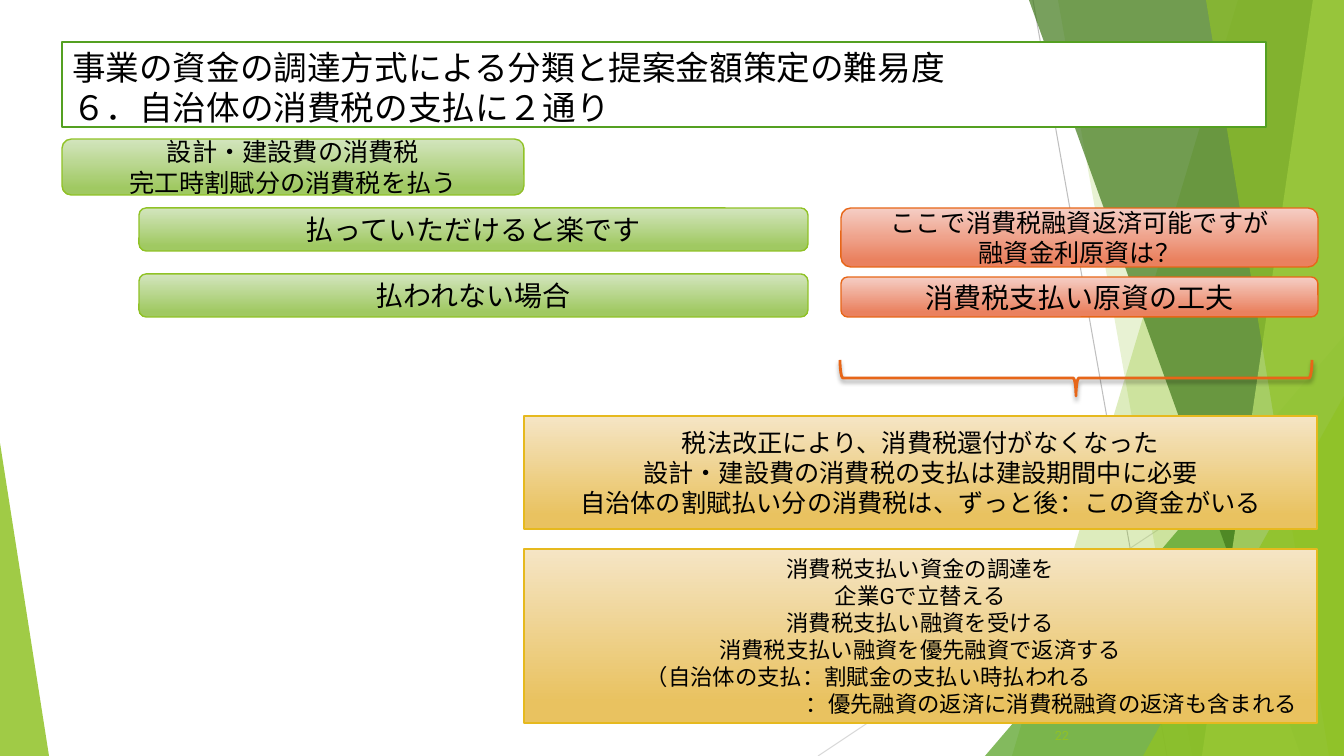
from dataclasses import dataclass

from lxml.etree import SubElement
from pptx import Presentation
from pptx.dml.color import RGBColor
from pptx.enum.shapes import MSO_CONNECTOR as Connector, MSO_SHAPE as Shape
from pptx.enum.text import MSO_ANCHOR as Anchor, MSO_AUTO_SIZE as AutoSize, PP_ALIGN as Align
from pptx.oxml.ns import qn
from pptx.util import Pt

PX = 914400 / 100.8
WIDTH, HEIGHT = 1344, 756


@dataclass(frozen=True)
class Theme:
    font: str = "Roboto"
    ink: str = "000000"
    paper: str = "FFFFFF"
    lime: str = "90C226"
    leaf: str = "54A021"
    forest: str = "3F7819"
    pale: str = "C0E474"
    orange: str = "E76618"
    green_box: tuple = ("D3E5BE", "A0C962", "90C226")
    red_box: tuple = ("F5CEC5", "EA815F", "E76618")
    gold_box: tuple = ("F5E5C5", "E9C260", "E6B91E")
    title: int = 24
    large: int = 20
    medium: int = 18
    small: int = 16
    number: int = 9


THEME = Theme()

TITLE = ["事業の資金の調達方式による分類と提案金額策定の難易度", "６．自治体の消費税の支払に２通り"]
TITLE_AREA = (62, 42, 1204, 85)
PAGE_NUMBER = "22"

# Start x, start y, end x, end y, colour
RAYS = [(1033, 0, 1167, HEIGHT, "BFBFBF"), (WIDTH, 406, 818, HEIGHT, "D9D9D9")]

# Bands: top x, bottom x, colour, opacity; each reaches the right edge
BANDS_BACK = [(1238, 1012, THEME.lime, 30), (1058, 1192, THEME.lime, 20)]
BANDS_FRONT = [
    (1029, 1301, THEME.forest, 70),
    (1313, 1202, THEME.pale, 70),
    (1206, 1329, THEME.lime, 65),
]
# Triangles: left, top, width, apex position, colour, opacity; each reaches the bottom
TRIANGLE_BACK = (985, 336, 359, 1, THEME.leaf, 72)
TRIANGLES_FRONT = [(1143, 396, 201, 1, THEME.lime, 80), (0, 443, 49, 0, THEME.lime, 85)]

LEFT_COLUMN, RIGHT_COLUMN, NOTE_COLUMN = (139, 669), (841, 477), (524, 793)

# Outline, column (left, width), top, height, colours, text size, lines
# A line is a text, or a text with its left indent
BOXES = [
    (Shape.ROUNDED_RECTANGLE, (62, 462), 139, 56, THEME.green_box, THEME.medium,
     ["設計・建設費の消費税", "完工時割賦分の消費税を払う"]),
    (Shape.ROUNDED_RECTANGLE, LEFT_COLUMN, 208, 43, THEME.green_box, THEME.large,
     ["払っていただけると楽です"]),
    (Shape.ROUNDED_RECTANGLE, RIGHT_COLUMN, 208, 59, THEME.red_box, THEME.medium,
     ["ここで消費税融資返済可能ですが", "融資金利原資は？"]),
    (Shape.ROUNDED_RECTANGLE, LEFT_COLUMN, 274, 43, THEME.green_box, THEME.large,
     ["払われない場合"]),
    (Shape.ROUNDED_RECTANGLE, RIGHT_COLUMN, 277, 40, THEME.red_box, THEME.large,
     ["消費税支払い原資の工夫"]),
    (Shape.RECTANGLE, NOTE_COLUMN, 416, 113, THEME.gold_box, THEME.medium,
     ["税法改正により、消費税還付がなくなった",
      "設計・建設費の消費税の支払は建設期間中に必要",
      "自治体の割賦払い分の消費税は、ずっと後：この資金がいる"]),
    (Shape.RECTANGLE, NOTE_COLUMN, 549, 174, THEME.gold_box, THEME.small,
     ["消費税支払い資金の調達を",
      "企業Gで立替える",
      "消費税支払い融資を受ける",
      "消費税支払い融資を優先融資で返済する",
      ("（自治体の支払：割賦金の支払い時払われる", 112),
      ("：優先融資の返済に消費税融資の返済も含まれる", 272)]),
]
BRACE_AREA = (1058, 142, 36, 472)


def px(*lengths):
    return [round(length * PX) for length in lengths]


def rgb(colour):
    return RGBColor.from_string(colour)


def add_span(para, text, size, colour=THEME.ink):
    span = para.add_run()
    span.text = text
    span.font.name = THEME.font
    span.font.size = Pt(size)
    span.font.color.rgb = rgb(colour)


def set_line(shape, colour, width):
    shape.line.color.rgb = rgb(colour)
    shape.line.width = Pt(width)


def tint(shape, colour, opacity):
    """Give a borderless decoration a see-through fill."""
    shape.shadow.inherit = False
    shape.line.fill.background()
    shape.fill.solid()
    shape.fill.fore_color.rgb = rgb(colour)
    value = shape._element.spPr.find(qn("a:solidFill"))[0]
    SubElement(value, qn("a:alpha"), val=str(opacity * 1000))


def add_ray(page, x1, y1, x2, y2, colour):
    ray = page.shapes.add_connector(Connector.STRAIGHT, *px(x1, y1, x2, y2))
    set_line(ray, colour, 0.75)
    SubElement(ray._element.spPr, qn("a:effectLst"))


def add_band(page, top_x, bottom_x, colour, opacity):
    outline = page.shapes.build_freeform(top_x, 0, scale=PX)
    outline.add_line_segments([(WIDTH, 0), (WIDTH, HEIGHT), (bottom_x, HEIGHT)], close=True)
    tint(outline.convert_to_shape(), colour, opacity)


def add_triangle(page, left, top, width, apex, colour, opacity):
    area = px(left, top, width, HEIGHT - top)
    triangle = page.shapes.add_shape(Shape.ISOSCELES_TRIANGLE, *area)
    triangle.adjustments[0] = apex
    tint(triangle, colour, opacity)


def add_backdrop(page):
    for ray in RAYS:
        add_ray(page, *ray)
    for band in BANDS_BACK:
        add_band(page, *band)
    add_triangle(page, *TRIANGLE_BACK)
    for band in BANDS_FRONT:
        add_band(page, *band)
    for triangle in TRIANGLES_FRONT:
        add_triangle(page, *triangle)


def place_title(page):
    title = page.shapes.title
    title.left, title.top, title.width, title.height = px(*TITLE_AREA)
    title.fill.solid()
    title.fill.fore_color.rgb = rgb(THEME.paper)
    set_line(title, THEME.leaf, 1.5)
    frame = title.text_frame
    frame.auto_size, frame.vertical_anchor = AutoSize.NONE, Anchor.TOP
    para = frame.paragraphs[0]
    para.alignment = Align.LEFT
    for index, text in enumerate(TITLE):
        if index:
            para.add_line_break()
        add_span(para, text, THEME.title)
    # The title lies in front of the backdrop
    page.shapes._spTree.append(title._element)


def add_box(page, outline, column, top, height, colours, size, lines):
    left, width = column
    box = page.shapes.add_shape(outline, *px(left, top, width, height))
    box.shadow.inherit = False
    light, deep, edge = colours
    box.fill.gradient()
    box.fill.gradient_angle = 270
    for stop, colour, position in zip(box.fill.gradient_stops, (light, deep), (0, 0.88)):
        stop.color.rgb = rgb(colour)
        stop.position = position
    set_line(box, edge, 1)
    frame = box.text_frame
    frame.word_wrap, frame.vertical_anchor = True, Anchor.MIDDLE
    for index, line in enumerate(lines):
        text, indent = (line, 0) if isinstance(line, str) else line
        para = frame.add_paragraph() if index else frame.paragraphs[0]
        para.alignment = Align.LEFT if indent else Align.CENTER
        if indent:
            para._p.get_or_add_pPr().set("marL", str(px(indent)[0]))
        add_span(para, text, size)


def add_brace(page):
    brace = page.shapes.add_shape(Shape.RIGHT_BRACE, *px(*BRACE_AREA))
    brace.rotation = 90
    brace.fill.background()
    set_line(brace, THEME.orange, 2)
    effects = SubElement(brace._element.spPr, qn("a:effectLst"))
    shadow = SubElement(effects, qn("a:outerShdw"), blurRad=str(Pt(3)), dist=str(Pt(2)),
                        dir="5400000", rotWithShape="0")
    value = SubElement(shadow, qn("a:srgbClr"), val=THEME.ink)
    SubElement(value, qn("a:alpha"), val="35000")


def add_page_number(page):
    frame = page.shapes.add_textbox(*px(999, 715, 80, 40)).text_frame
    frame.word_wrap, frame.vertical_anchor = True, Anchor.MIDDLE
    para = frame.paragraphs[0]
    para.alignment = Align.RIGHT
    add_span(para, PAGE_NUMBER, THEME.number, THEME.lime)


def main():
    deck = Presentation()
    deck.slide_width, deck.slide_height = px(WIDTH, HEIGHT)
    page = deck.slides.add_slide(deck.slide_layouts.get_by_name("Title Only"))
    add_backdrop(page)
    add_page_number(page)
    place_title(page)
    for box in BOXES:
        add_box(page, *box)
    add_brace(page)
    deck.save("out.pptx")


if __name__ == "__main__":
    main()
